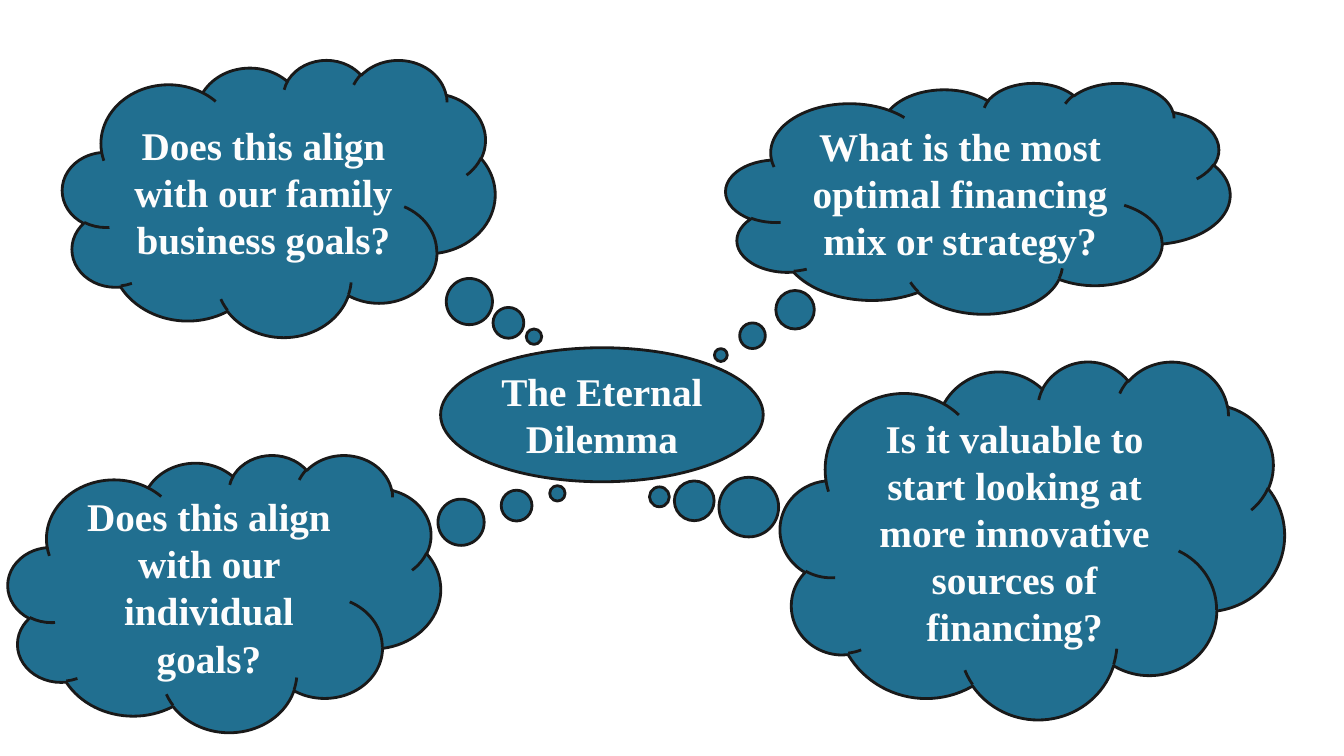
from pptx import Presentation
from pptx.dml.color import RGBColor
from pptx.enum.shapes import MSO_SHAPE
from pptx.enum.text import MSO_ANCHOR, PP_ALIGN
from pptx.util import Inches, Pt

TEAL = RGBColor(0x21, 0x6F, 0x90)
DARK = RGBColor(0x19, 0x19, 0x19)
PALE = RGBColor(0xFD, 0xFD, 0xFD)

# Text, (left, top, width, height), tail as a share of the cloud's size
CLOUDS = [
    ("What is the most optimal financing mix or strategy?",
     (7.2, 0.82, 5, 2.29), (-0.51, 0.68)),
    ("Does this align with our family business goals?",
     (0.62, 0.59, 4.29, 2.75), (0.59, 0.5)),
    ("Does this align with our individual goals?",
     (0.08, 4.51, 4.29, 2.75), (0.77, -0.36)),
    ("Is it valuable to start looking at more innovative sources of financing?",
     (7.74, 3.58, 5, 3.55), (-0.74, -0.12)),
]
CENTRE = ("The Eternal Dilemma", (4.37, 3.45, 3.2, 1.33))
FONT = {"name": "Times New Roman", "size": Pt(28), "bold": True}


def add_bubble(slide, kind, text, box):
    shape = slide.shapes.add_shape(kind, *map(Inches, box))
    shape.shadow.inherit = False
    shape.fill.solid()
    shape.fill.fore_color.rgb = TEAL
    shape.line.color.rgb = DARK
    shape.line.width = Pt(2)
    frame = shape.text_frame
    frame.word_wrap = True
    frame.vertical_anchor = MSO_ANCHOR.MIDDLE
    para = frame.paragraphs[0]
    para.alignment = PP_ALIGN.CENTER
    run = para.add_run()
    run.text = text
    for key, value in FONT.items():
        setattr(run.font, key, value)
    run.font.color.rgb = PALE
    return shape


def main():
    deck = Presentation()
    deck.slide_width, deck.slide_height = Inches(13.33), Inches(7.5)
    slide = deck.slides.add_slide(deck.slide_layouts[6])
    for text, box, tail in CLOUDS:
        cloud = add_bubble(slide, MSO_SHAPE.CLOUD_CALLOUT, text, box)
        for i, share in enumerate(tail):
            cloud.adjustments[i] = share
    add_bubble(slide, MSO_SHAPE.OVAL, *CENTRE)
    deck.save("out.pptx")


if __name__ == "__main__":
    main()
